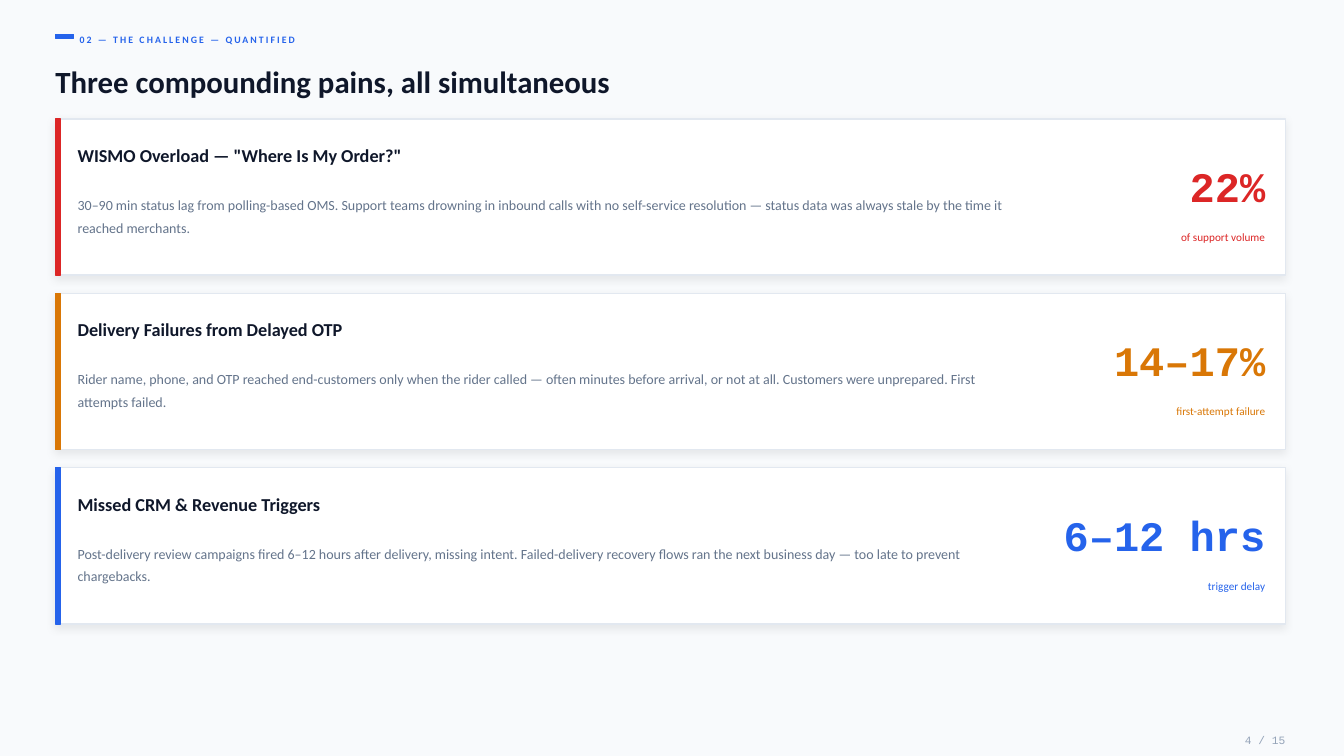
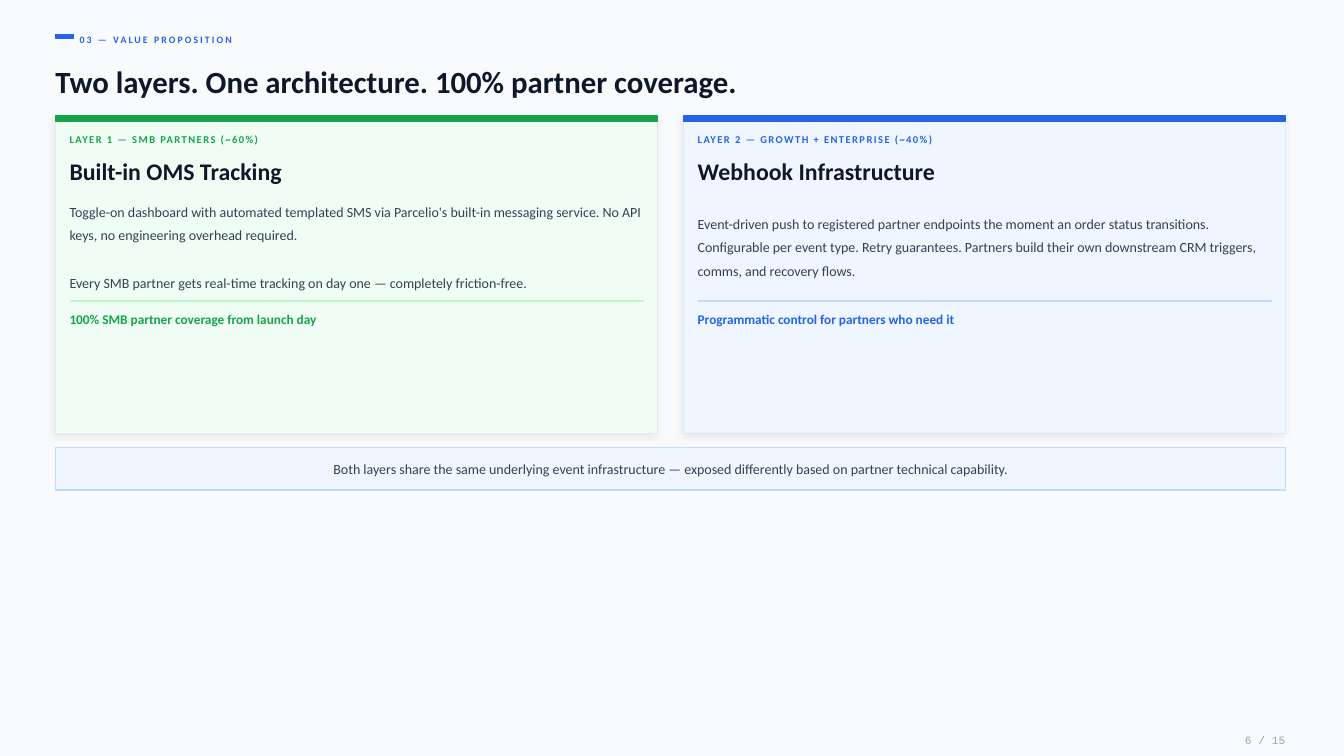
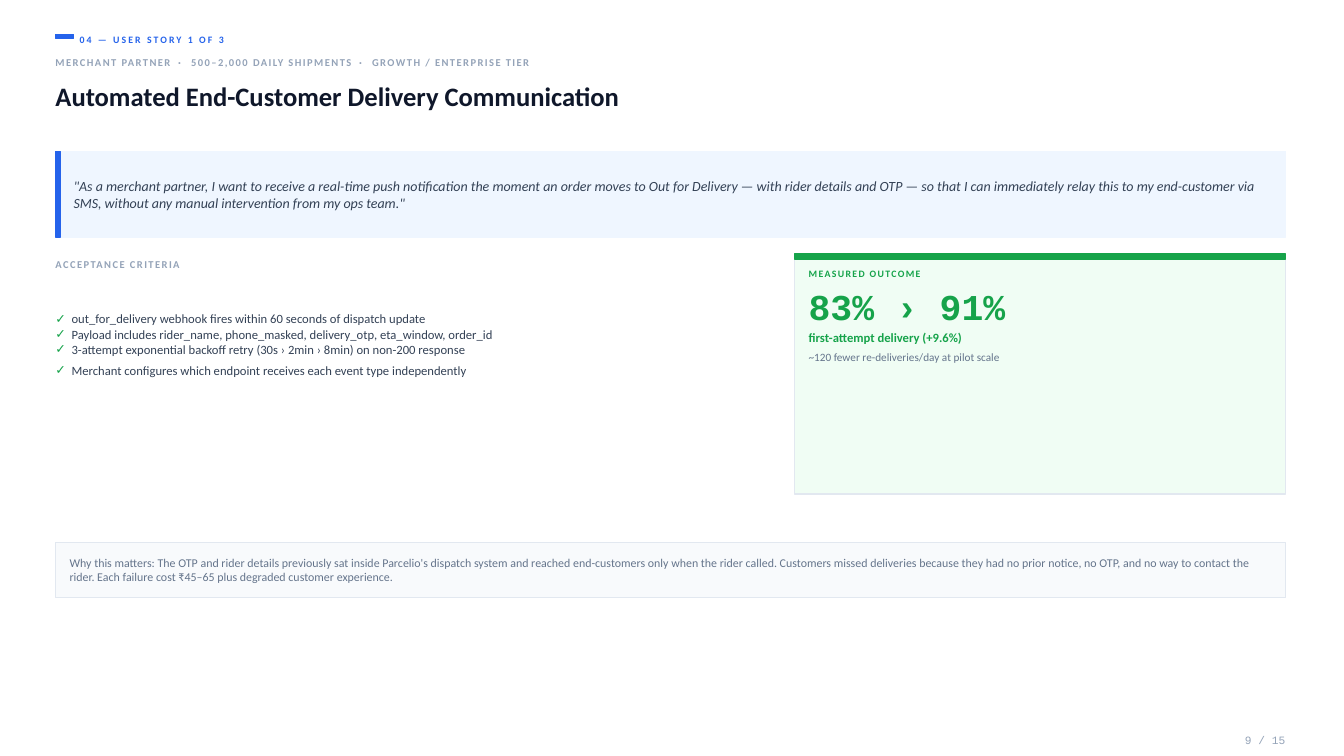
"""Build three slides on delivery pains, the two-layer offer and a user story."""
from dataclasses import dataclass

from lxml.etree import SubElement
from pptx import Presentation
from pptx.dml.color import RGBColor
from pptx.enum.shapes import MSO_CONNECTOR as Connector, MSO_SHAPE as Shape
from pptx.enum.text import MSO_ANCHOR as Anchor, MSO_AUTO_SIZE as AutoSize, PP_ALIGN as Align
from pptx.oxml.ns import qn
from pptx.util import Inches, Pt


@dataclass(frozen=True)
class Theme:
    sans: str = "Calibri"
    mono: str = "Courier New"
    white: str = "FFFFFF"
    mist: str = "F8FAFC"
    ink: str = "0F172A"
    text: str = "334155"
    slate: str = "64748B"
    faint: str = "94A3B8"
    border: str = "E2E8F0"
    red: str = "DC2626"
    amber: str = "D97706"
    blue: str = "2563EB"
    blue_tint: str = "EFF6FF"
    blue_rule: str = "BFDBFE"
    green: str = "16A34A"
    green_tint: str = "F0FDF4"
    green_rule: str = "BBF7D0"
    title: float = 22
    story_title: float = 19
    layer_title: float = 17
    pain_title: float = 13
    pain_figure: float = 30
    outcome_figure: float = 26
    body: float = 10
    proof: float = 9.5
    criterion: float = 9
    reason: float = 8.5
    caption: float = 8
    label: float = 7.5
    chapter: float = 7


T = Theme()
LEFT, WIDTH, BAR = 0.55, 12.2, 0.05
PAGES = 15

PAINS = [
    ('WISMO Overload — "Where Is My Order?"',
     "30–90 min status lag from polling-based OMS. Support teams drowning in inbound calls with no "
     "self-service resolution — status data was always stale by the time it reached merchants.",
     "22%", "of support volume", T.red),
    ("Delivery Failures from Delayed OTP",
     "Rider name, phone, and OTP reached end-customers only when the rider called — often minutes "
     "before arrival, or not at all. Customers were unprepared. First attempts failed.",
     "14–17%", "first-attempt failure", T.amber),
    ("Missed CRM & Revenue Triggers",
     "Post-delivery review campaigns fired 6–12 hours after delivery, missing intent. Failed-delivery "
     "recovery flows ran the next business day — too late to prevent chargebacks.",
     "6–12 hrs", "trigger delay", T.blue),
]

LAYERS = [
    ("LAYER 1 — SMB PARTNERS (~60%)", "Built-in OMS Tracking",
     ["Toggle-on dashboard with automated templated SMS via Parcelio's built-in messaging service. "
      "No API keys, no engineering overhead required.",
      "Every SMB partner gets real-time tracking on day one — completely friction-free."],
     "100% SMB partner coverage from launch day", T.green, T.green_tint, T.green_rule),
    ("LAYER 2 — GROWTH + ENTERPRISE (~40%)", "Webhook Infrastructure",
     ["Event-driven push to registered partner endpoints the moment an order status transitions. "
      "Configurable per event type. Retry guarantees. Partners build their own downstream CRM "
      "triggers, comms, and recovery flows."],
     "Programmatic control for partners who need it", T.blue, T.blue_tint, T.blue_rule),
]
SHARED_BASE = ("Both layers share the same underlying event infrastructure — exposed differently "
               "based on partner technical capability.")

PERSONA = ["MERCHANT PARTNER", "500–2,000 DAILY SHIPMENTS", "GROWTH / ENTERPRISE TIER"]
STORY = ('"As a merchant partner, I want to receive a real-time push notification the moment an order '
         "moves to Out for Delivery — with rider details and OTP — so that I can immediately relay this "
         'to my end-customer via SMS, without any manual intervention from my ops team."')
CRITERIA = [
    "out_for_delivery webhook fires within 60 seconds of dispatch update",
    "Payload includes rider_name, phone_masked, delivery_otp, eta_window, order_id",
    "3-attempt exponential backoff retry (30s › 2min › 8min) on non-200 response",
    "Merchant configures which endpoint receives each event type independently",
]
OUTCOME = [
    ("MEASURED OUTCOME", 2.62, 0.18, T.chapter, T.green, dict(bold=True, tracking=1)),
    ("83% › 91%", 2.82, 0.42, T.outcome_figure, T.green, dict(bold=True, font=T.mono)),
    ("first-attempt delivery (+9.6%)", 3.25, 0.2, T.criterion, T.green, dict(bold=True)),
    ("~120 fewer re-deliveries/day at pilot scale", 3.45, 0.18, T.caption, T.slate, {}),
]
REASON = ("Why this matters: The OTP and rider details previously sat inside Parcelio's dispatch system "
          "and reached end-customers only when the rider called. Customers missed deliveries because "
          "they had no prior notice, no OTP, and no way to contact the rider. Each failure cost ₹45–65 "
          "plus degraded customer experience.")


def rgb(color):
    return RGBColor.from_string(color)


def inches(*lengths):
    return [Inches(round(length, 2)) for length in lengths]


def style_run(run, size, color, bold=False, italic=False, font=T.sans, tracking=0):
    run.font.size, run.font.name = Pt(size), font
    run.font.bold, run.font.italic = bold, italic
    run.font.color.rgb = rgb(color)
    if tracking:
        run._r.get_or_add_rPr().set("spc", str(round(tracking * 100)))


def write(frame, text, size, color, align=Align.LEFT, spacing=1.0, gap=0, insets=(0, 0), **look):
    frame.word_wrap, frame.auto_size = True, AutoSize.NONE
    frame.vertical_anchor = Anchor.MIDDLE
    frame.margin_left, frame.margin_right = inches(*insets)
    frame.margin_top = frame.margin_bottom = 0
    frame.text = text if isinstance(text, str) else "\n".join(text)
    for index, paragraph in enumerate(frame.paragraphs):
        paragraph.alignment, paragraph.line_spacing = align, spacing
        paragraph.space_before = Pt(gap if index else 0)
        for run in paragraph.runs:
            style_run(run, size, color, **look)
    return frame


def add_text(slide, bounds, text, size, color, **look):
    return write(slide.shapes.add_textbox(*inches(*bounds)).text_frame, text, size, color, **look)


def add_panel(slide, bounds, fill, line=None, shadow=False):
    panel = slide.shapes.add_shape(Shape.RECTANGLE, *inches(*bounds))
    panel.shadow.inherit = False
    panel.fill.solid()
    panel.fill.fore_color.rgb = rgb(fill)
    panel.line.color.rgb = rgb(line or fill)
    panel.line.width = Pt(1)
    if shadow:
        effects = panel._element.spPr.find(qn("a:effectLst"))
        outer = SubElement(effects, qn("a:outerShdw"), blurRad=str(Pt(6)), dist=str(Pt(2)),
                           dir=str(135 * 60000), algn="bl", rotWithShape="0")
        tone = SubElement(outer, qn("a:srgbClr"), val="000000")
        SubElement(tone, qn("a:alpha"), val="8000")
    return panel


def add_rule(slide, left, top, width, color):
    rule = slide.shapes.add_connector(Connector.STRAIGHT, *inches(left, top, left + width, top))
    rule.line.color.rgb = rgb(color)
    rule.line.width = Pt(1.5)
    SubElement(rule._element.spPr, qn("a:effectLst"))


def place(placeholder, bounds):
    placeholder.left, placeholder.top, placeholder.width, placeholder.height = inches(*bounds)
    return placeholder.text_frame


def start_slide(deck, layout, chapter, title, page, background=T.mist,
                title_top=0.58, title_height=0.46, title_size=T.title):
    slide = deck.slides.add_slide(deck.slide_layouts.get_by_name(layout))
    slide.background.fill.solid()
    slide.background.fill.fore_color.rgb = rgb(background)
    add_panel(slide, (LEFT, 0.34, 0.18, 0.04), T.blue)
    add_text(slide, (0.79, 0.3, 11.96, 0.18), chapter, T.chapter, T.blue, bold=True, tracking=1.5)
    write(place(slide.shapes.title, (LEFT, title_top, WIDTH, title_height)),
          title, title_size, T.ink, bold=True)
    add_text(slide, (12.15, 7.25, 0.6, 0.18), f"{page} / {PAGES}", T.caption, T.faint,
             align=Align.RIGHT, font=T.mono)
    return slide


def build_pains(deck):
    slide = start_slide(deck, "Title Only", "02 — THE CHALLENGE — QUANTIFIED",
                        "Three compounding pains, all simultaneous", 4)
    height, gap = 1.55, 0.18
    for row, (name, detail, figure, caption, accent) in enumerate(PAINS):
        top = 1.18 + row * (height + gap)
        add_panel(slide, (LEFT, top, WIDTH, height), T.white, T.border, shadow=True)
        add_panel(slide, (LEFT, top, BAR, height), accent)
        add_text(slide, (0.77, top + 0.22, 9.4, 0.28), name, T.pain_title, T.ink, bold=True)
        add_text(slide, (0.77, top + 0.56, 9.4, 0.75), detail, T.body, T.slate, spacing=1.35)
        add_text(slide, (10.55, top + 0.32, 2, 0.68), figure, T.pain_figure, accent,
                 align=Align.RIGHT, bold=True, font=T.mono)
        add_text(slide, (10.55, top + 1.02, 2, 0.3), caption, T.caption, accent, align=Align.RIGHT)


def build_layers(deck):
    slide = start_slide(deck, "Title Only", "03 — VALUE PROPOSITION",
                        "Two layers. One architecture. 100% partner coverage.", 6)
    top, gap = 1.15, 0.26
    width = (WIDTH - gap * (len(LAYERS) - 1)) / len(LAYERS)
    for column, (label, name, details, proof, accent, tint, rule) in enumerate(LAYERS):
        left = LEFT + column * (width + gap)
        inner, span = left + 0.14, 5.7
        add_panel(slide, (left, top, width, 3.15), tint, T.border, shadow=True)
        add_panel(slide, (left, top, width, BAR), accent)
        add_text(slide, (inner, 1.28, span, 0.2), label, T.label, accent, bold=True, tracking=1)
        add_text(slide, (inner, 1.52, span, 0.35), name, T.layer_title, T.ink, bold=True)
        add_text(slide, (inner, 1.92, span, 1), details, T.body, T.text, spacing=1.4, gap=17)
        add_rule(slide, inner, 2.99, span, rule)
        add_text(slide, (inner, 3.06, span, 0.22), proof, T.proof, accent, bold=True)
    base = add_panel(slide, (LEFT, 4.44, WIDTH, 0.42), T.blue_tint, T.blue_rule)
    write(base.text_frame, SHARED_BASE, T.body, T.text, align=Align.CENTER, insets=(0.18, 0.18))


def add_persona(slide):
    look = dict(size=T.label, color=T.faint, bold=True)
    frame = add_text(slide, (LEFT, 0.52, WIDTH, 0.2), PERSONA[0], tracking=1, **look)
    for trait in PERSONA[1:]:
        for text, tracking in ((" · ", 2.8), (trait, 1)):
            run = frame.paragraphs[0].add_run()
            run.text = text
            style_run(run, tracking=tracking, **look)


def add_checks(frame):
    for paragraph in frame.paragraphs:
        properties = paragraph._p.get_or_add_pPr()
        properties.set("marL", str(Inches(0.16)))
        properties.set("indent", str(-Inches(0.16)))
        tone = SubElement(properties, qn("a:buClr"))
        SubElement(tone, qn("a:srgbClr"), val=T.green)
        SubElement(properties, qn("a:buFont"), typeface=T.sans)
        SubElement(properties, qn("a:buChar"), char="✓")


def build_story(deck):
    slide = start_slide(deck, "Title and Content", "04 — USER STORY 1 OF 3",
                        "Automated End-Customer Delivery Communication", 9, T.white,
                        title_top=0.75, title_height=0.4, title_size=T.story_title)
    add_persona(slide)
    quote = add_panel(slide, (LEFT, 1.5, WIDTH, 0.85), T.blue_tint)
    write(quote.text_frame, STORY, T.body, T.text, insets=(0.18, 0.1), italic=True)
    add_panel(slide, (LEFT, 1.5, BAR, 0.85), T.blue)

    add_text(slide, (LEFT, 2.52, 7.08, 0.2), "ACCEPTANCE CRITERIA", T.label, T.faint,
             bold=True, tracking=1)
    criteria = write(place(slide.placeholders[1], (LEFT, 2.78, 7.08, 1.28)),
                     CRITERIA, T.criterion, T.text)
    criteria.paragraphs[-1].space_before = Pt(4.4)
    add_checks(criteria)

    left, top, width = 7.88, 2.52, 4.87
    add_panel(slide, (left, top, width, 2.38), T.green_tint, T.border)
    add_panel(slide, (left, top, width, BAR), T.green)
    for text, line_top, height, size, color, look in OUTCOME:
        add_text(slide, (left + 0.14, line_top, width - 0.28, height), text, size, color, **look)

    reason = add_panel(slide, (LEFT, 5.38, WIDTH, 0.55), T.mist, T.border)
    write(reason.text_frame, REASON, T.reason, T.slate, insets=(0.14, 0.14))


def main():
    deck = Presentation()
    deck.slide_width, deck.slide_height = inches(13.33, 7.5)
    for build in (build_pains, build_layers, build_story):
        build(deck)
    deck.save("out.pptx")


if __name__ == "__main__":
    main()
